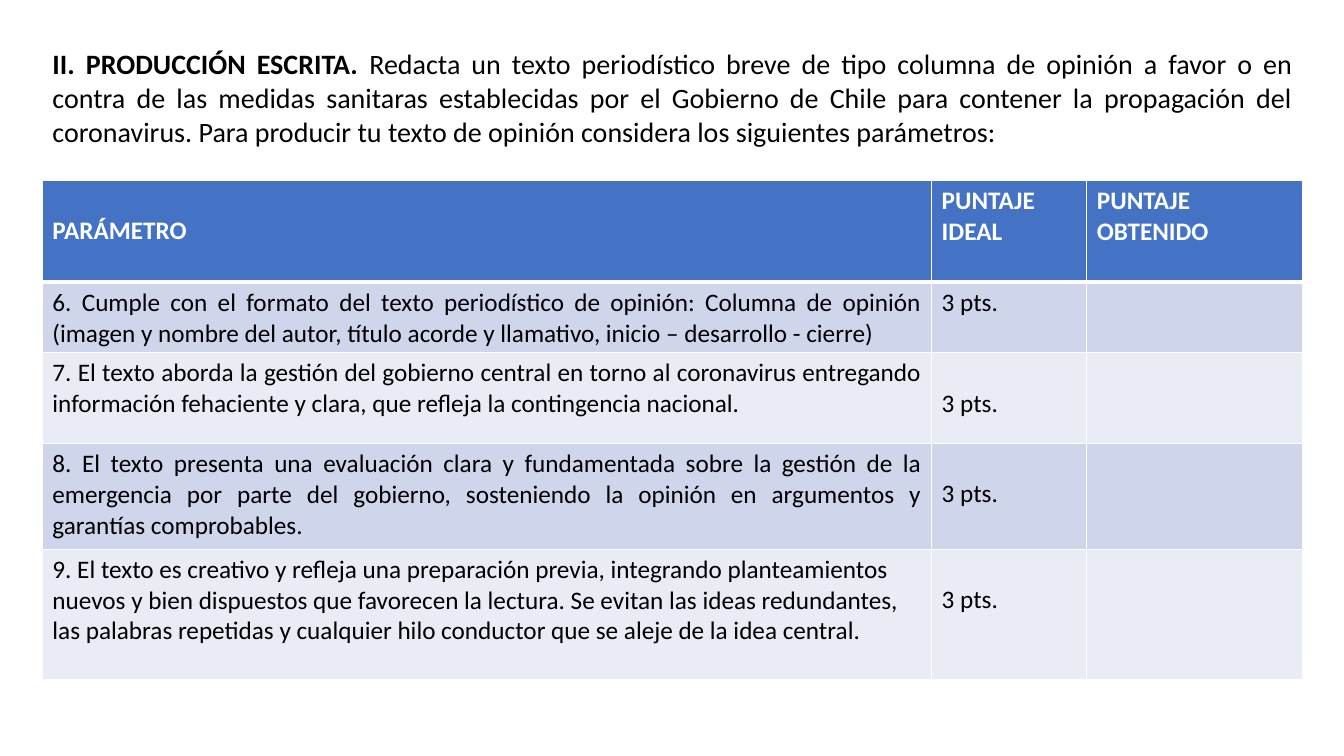
from dataclasses import dataclass

from lxml.etree import SubElement
from pptx import Presentation
from pptx.dml.color import RGBColor
from pptx.enum.text import MSO_ANCHOR as Anchor, MSO_AUTO_SIZE as AutoSize, PP_ALIGN as Align
from pptx.oxml.ns import qn
from pptx.util import Inches, Pt


@dataclass(frozen=True)
class Theme:
    """Colours, font and type sizes of the slide."""
    font: str = "Calibri"
    ink: str = "000000"
    paper: str = "FFFFFF"
    header: str = "4472C4"
    bands: tuple = ("CFD5EA", "E9EBF5")
    intro_size: int = 20
    table_size: int = 18
    thin: int = 1
    thick: int = 3


THEME = Theme()
COLUMNS = (8.82, 1.54, 2.14)
ROW_HEIGHTS = (1.01, 0.69, 0.9, 1.05, 1.29)
LOWERED_MARGIN = 0.35
POINTS = "3 pts."
HEADINGS = ("PARÁMETRO", "PUNTAJE IDEAL", "PUNTAJE OBTENIDO")
INTRO = (
    ("II. PRODUCCIÓN ESCRITA. ", True),
    ("Redacta un texto periodístico breve de tipo columna de opinión a favor o en contra "
     "de las medidas sanitaras establecidas por el Gobierno de Chile para contener la "
     "propagación del coronavirus. Para producir tu texto de opinión considera los "
     "siguientes parámetros:", False),
)
CRITERIA = (
    ("6. Cumple con el formato del texto periodístico de opinión: Columna de opinión "
     "(imagen y nombre del autor, título acorde y llamativo, inicio – desarrollo - cierre)",
     Align.JUSTIFY),
    ("7. El texto aborda la gestión del gobierno central en torno al coronavirus entregando "
     "información fehaciente y clara, que refleja la contingencia nacional.", Align.JUSTIFY),
    ("8. El texto presenta una evaluación clara y fundamentada sobre la gestión de la "
     "emergencia por parte del gobierno, sosteniendo la opinión en argumentos y garantías "
     "comprobables.", Align.JUSTIFY),
    ("9. El texto es creativo y refleja una preparación previa, integrando planteamientos "
     "nuevos y bien dispuestos que favorecen la lectura. Se evitan las ideas redundantes, "
     "las palabras repetidas y cualquier hilo conductor que se aleje de la idea central.",
     Align.LEFT),
)


def add_span(para, text, size, color, bold=False):
    """Append one formatted run to a paragraph."""
    span = para.add_run()
    span.text = text
    span.font.name = THEME.font
    span.font.size = Pt(size)
    span.font.bold = bold
    span.font.color.rgb = RGBColor.from_string(color)


def set_borders(cell, top, bottom):
    """Draw the four borders of a cell, with the given top and bottom widths."""
    properties = cell._tc.get_or_add_tcPr()
    widths = {"L": THEME.thin, "R": THEME.thin, "T": top, "B": bottom}
    for side, width in widths.items():
        line = SubElement(properties, qn(f"a:ln{side}"), w=str(Pt(width)))
        fill = SubElement(line, qn("a:solidFill"))
        SubElement(fill, qn("a:srgbClr"), val=THEME.paper)


def fill_cell(cell, text, row, align=Align.LEFT, lowered=False):
    """Style one table cell and write its text."""
    is_header = row == 0
    set_borders(cell, THEME.thick if row == 1 else THEME.thin,
                THEME.thick if is_header else THEME.thin)
    cell.fill.solid()
    background = THEME.header if is_header else THEME.bands[(row - 1) % 2]
    cell.fill.fore_color.rgb = RGBColor.from_string(background)
    if lowered:
        cell.margin_top = Inches(LOWERED_MARGIN)
    para = cell.text_frame.paragraphs[0]
    para.alignment = align
    if text:
        add_span(para, text, THEME.table_size,
                 THEME.paper if is_header else THEME.ink, is_header)
    else:
        para.font.size = Pt(THEME.table_size)


def add_intro(page, left, top, width, height):
    """Place the task statement in the title placeholder."""
    box = page.shapes.title
    box.left, box.top = Inches(left), Inches(top)
    box.width, box.height = Inches(width), Inches(height)
    frame = box.text_frame
    frame.word_wrap = True
    frame.auto_size = AutoSize.SHAPE_TO_FIT_TEXT
    frame.vertical_anchor = Anchor.MIDDLE
    para = frame.paragraphs[0]
    para.alignment = Align.JUSTIFY
    for text, bold in INTRO:
        add_span(para, text, THEME.intro_size, THEME.ink, bold)


def add_rubric(page, left, top, width, height):
    """Place the scoring table in the given box."""
    table = page.shapes.add_table(len(ROW_HEIGHTS), len(COLUMNS), Inches(left), Inches(top),
                                  Inches(width), Inches(height)).table
    for column, size in zip(table.columns, COLUMNS):
        column.width = Inches(size)
    for row, size in zip(table.rows, ROW_HEIGHTS):
        row.height = Inches(size)
    for index, heading in enumerate(HEADINGS):
        fill_cell(table.cell(0, index), heading, 0, lowered=index == 0)
    for row, (criterion, align) in enumerate(CRITERIA, start=1):
        fill_cell(table.cell(row, 0), criterion, row, align)
        fill_cell(table.cell(row, 1), POINTS, row, lowered=row > 1)
        fill_cell(table.cell(row, 2), "", row)


def main():
    """Build and save the deck."""
    deck = Presentation()
    deck.slide_width, deck.slide_height = Inches(13.33), Inches(7.5)
    page = deck.slides.add_slide(deck.slide_layouts[5])
    add_intro(page, 0.42, 0.41, sum(COLUMNS), 1.11)
    add_rubric(page, 0.42, 1.79, sum(COLUMNS), sum(ROW_HEIGHTS))
    deck.save("out.pptx")


if __name__ == "__main__":
    main()
